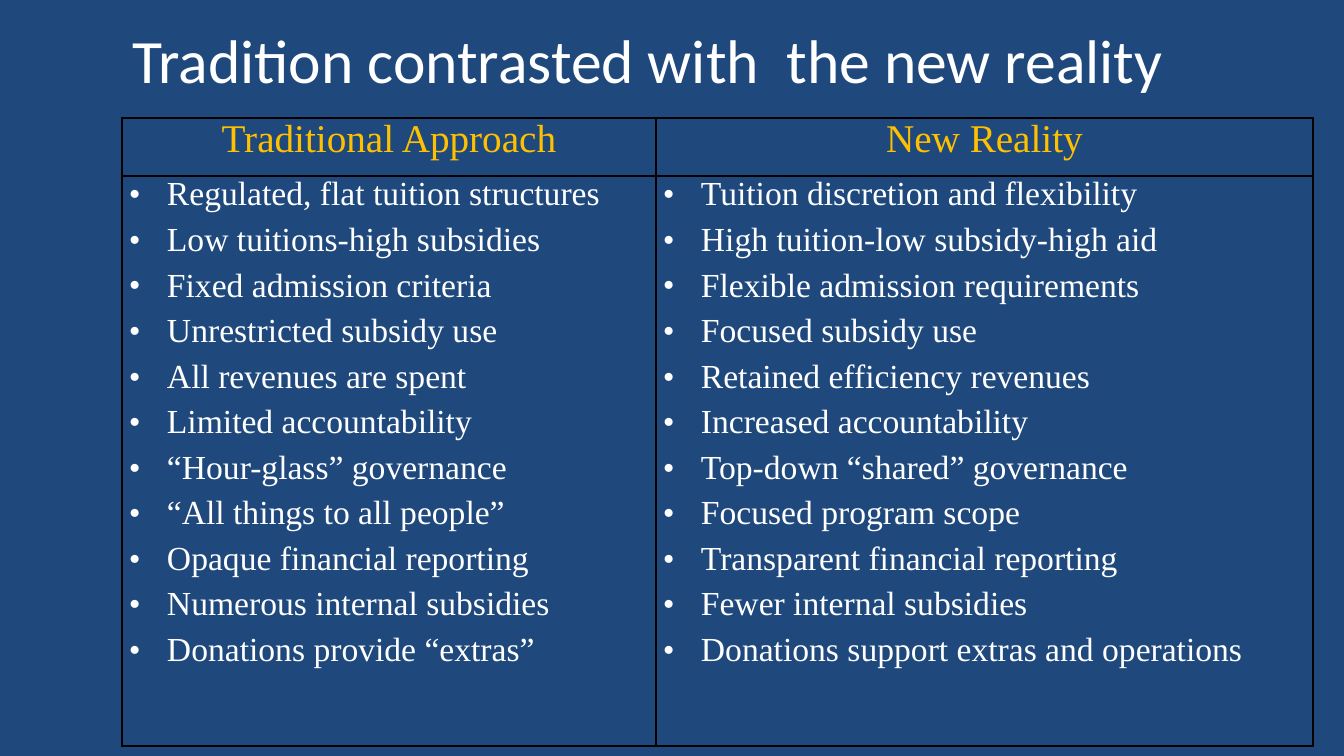
from dataclasses import dataclass

from lxml.etree import SubElement
from pptx import Presentation
from pptx.dml.color import RGBColor
from pptx.enum.text import MSO_ANCHOR, PP_ALIGN
from pptx.oxml.ns import qn
from pptx.util import Emu, Pt

EMU_PER_PX = 914400 / 100.8


@dataclass(frozen=True)
class Theme:
    background: str = "1F497D"
    text: str = "FFFFFF"
    heading: str = "FFC000"
    border: str = "000000"
    title_font: str = "Calibri"
    table_font: str = "Times New Roman"
    title_size: int = 44
    heading_size: int = 28
    item_size: int = 24
    item_gap: int = 6
    border_width: int = 1


@dataclass(frozen=True)
class Approach:
    heading: str
    width: int
    items: tuple[str, ...]


THEME = Theme()
TABLE_LEFT, TABLE_TOP = 122, 118
ROW_HEIGHTS = (58, 570)
CELL_MARGIN = 7
BULLET_INDENT = 38

APPROACHES = (
    Approach("Traditional Approach", 534, (
        "Regulated, flat tuition structures",
        "Low tuitions-high subsidies",
        "Fixed admission criteria",
        "Unrestricted subsidy use",
        "All revenues are spent",
        "Limited accountability",
        "“Hour-glass” governance",
        "“All things to all people”",
        "Opaque financial reporting",
        "Numerous internal subsidies",
        "Donations provide “extras”",
    )),
    Approach("New Reality", 657, (
        "Tuition discretion and flexibility",
        "High tuition-low subsidy-high aid",
        "Flexible admission requirements",
        "Focused subsidy use",
        "Retained efficiency revenues",
        "Increased accountability",
        "Top-down “shared” governance",
        "Focused program scope",
        "Transparent financial reporting",
        "Fewer internal subsidies",
        "Donations support extras and operations",
    )),
)


def px(length: int) -> Emu:
    return Emu(round(length * EMU_PER_PX))


def format_runs(para, font_name: str, size: int, color: str) -> None:
    for span in para.runs:
        span.font.name = font_name
        span.font.size = Pt(size)
        span.font.bold = False
        span.font.color.rgb = RGBColor.from_string(color)


def add_bullet(para) -> None:
    properties = para._p.get_or_add_pPr()
    properties.set("marL", str(px(BULLET_INDENT)))
    properties.set("indent", str(-px(BULLET_INDENT)))
    SubElement(properties, qn("a:buFont"), typeface=THEME.table_font)
    SubElement(properties, qn("a:buChar"), char="•")


def style_cell(cell) -> None:
    """Give the cell black borders, its margins and no fill."""
    cell.margin_left = cell.margin_right = px(CELL_MARGIN)
    cell.margin_top = cell.margin_bottom = 0
    cell.vertical_anchor = MSO_ANCHOR.TOP
    properties = cell._tc.get_or_add_tcPr()
    for side in ("a:lnL", "a:lnR", "a:lnT", "a:lnB"):
        line = SubElement(properties, qn(side), w=str(Pt(THEME.border_width)))
        fill = SubElement(line, qn("a:solidFill"))
        SubElement(fill, qn("a:srgbClr"), val=THEME.border)
    cell.fill.background()


def add_title(page, text: str) -> None:
    title = page.shapes.title
    title.left, title.top = px(TABLE_LEFT), 0
    title.width, title.height = px(1097), px(118)
    frame = title.text_frame
    frame.text = text
    frame.word_wrap = True
    frame.vertical_anchor = MSO_ANCHOR.MIDDLE
    para = frame.paragraphs[0]
    para.alignment = PP_ALIGN.LEFT
    format_runs(para, THEME.title_font, THEME.title_size, THEME.text)


def fill_heading(cell, heading: str) -> None:
    style_cell(cell)
    cell.text_frame.text = heading
    para = cell.text_frame.paragraphs[0]
    para.alignment = PP_ALIGN.CENTER
    format_runs(para, THEME.table_font, THEME.heading_size, THEME.heading)


def fill_items(cell, items: tuple[str, ...]) -> None:
    style_cell(cell)
    cell.text_frame.text = "\n".join(items)
    for para in cell.text_frame.paragraphs:
        para.space_after = Pt(THEME.item_gap)
        add_bullet(para)
        format_runs(para, THEME.table_font, THEME.item_size, THEME.text)


def add_comparison(page, approaches: tuple[Approach, ...]) -> None:
    width = sum(approach.width for approach in approaches)
    table = page.shapes.add_table(
        len(ROW_HEIGHTS), len(approaches),
        px(TABLE_LEFT), px(TABLE_TOP), px(width), px(sum(ROW_HEIGHTS)),
    ).table
    table.first_row = table.horz_banding = False
    for row, height in zip(table.rows, ROW_HEIGHTS):
        row.height = px(height)
    for index, approach in enumerate(approaches):
        table.columns[index].width = px(approach.width)
        fill_heading(table.cell(0, index), approach.heading)
        fill_items(table.cell(1, index), approach.items)


def main() -> None:
    deck = Presentation()
    deck.slide_width, deck.slide_height = px(1344), px(756)
    page = deck.slides.add_slide(deck.slide_layouts.get_by_name("Title Only"))
    page.background.fill.solid()
    page.background.fill.fore_color.rgb = RGBColor.from_string(THEME.background)
    add_title(page, "Tradition contrasted with  the new reality")
    add_comparison(page, APPROACHES)
    deck.save("out.pptx")


if __name__ == "__main__":
    main()
